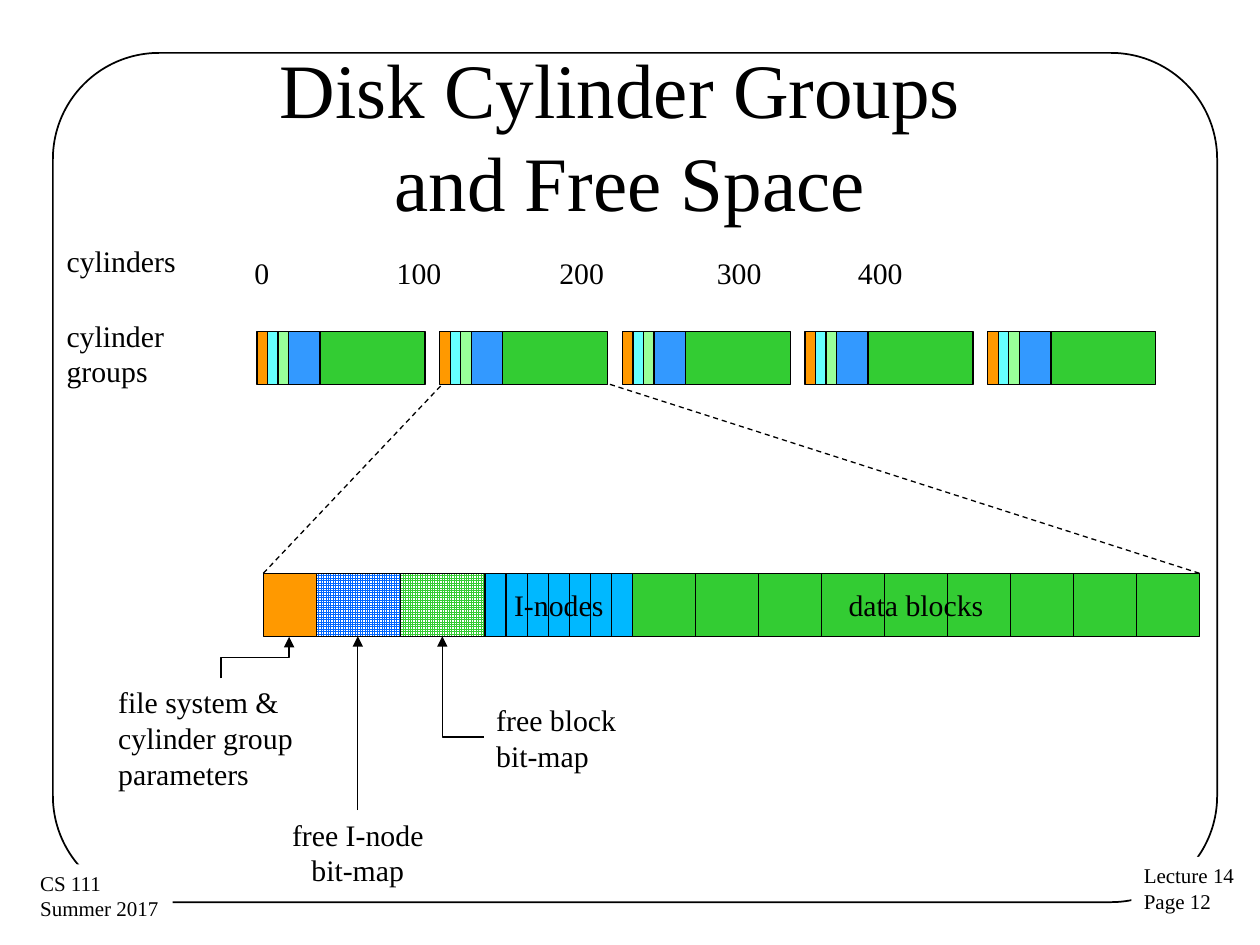
from lxml import etree
from pptx import Presentation
from pptx.dml.color import RGBColor
from pptx.enum import dml, shapes, text
from pptx.oxml.ns import qn
from pptx.util import Inches, Pt

FONT, INK, WHITE = "Times New Roman", "000000", "FFFFFF"
LEFT, MID = text.PP_ALIGN.LEFT, text.PP_ALIGN.CENTER
STRAIGHT, ELBOW = shapes.MSO_CONNECTOR.STRAIGHT, shapes.MSO_CONNECTOR.ELBOW

TITLE = ["Disk Cylinder Groups ", "and Free Space"]
FOOTERS = [
    ((8.98, 6.8, 0.93, 0.51), ["Lecture 14", "Page 12"]),
    ((0.22, 6.86, 1.15, 0.51), ["CS 111", "Summer 2017"]),
]
LABELS = [
    ((0.43, 1.88, 1.25, 0.38), "cylinders", LEFT),
    ((0.43, 2.47, 1.5, 0.67), "cylinder groups", LEFT),
    ((0.84, 5.38, 1.83, 0.96), "file system & cylinder group parameters", LEFT),
    ((3.84, 5.52, 1.5, 0.67), "free block bit-map", LEFT),
    ((2.09, 6.43, 1.5, 0.67), "free I-node bit-map", MID),
]
COUNTS = ["0", "100", "200", "300", "400"]
STOPS = [1.13, 2.42, 3.67, 4.79]

# One small group: width in twelfths of an inch, colour
PARTS = [(1, "FF9900"), (1, "66FFFF"), (1, "99FF99"), (3, "3399FF"), (10, "33CC33")]
GROUPS, START, PITCH = 5, 2.04, 1.45
ROW, TALL = 2.63, 0.42

# The enlarged group: width, colour, is patterned, label, number of cells
ZOOM = [
    (0.42, "FF9900", False, "", 1),
    (0.67, "0066FF", True, "", 1),
    (0.67, "33CC33", True, "", 1),
    (1.17, "00B8FF", False, "I-nodes", 7),
    (4.5, "33CC33", False, "data blocks", 9),
]
EDGE, TOP, HIGH = 2.09, 4.55, 0.5
BASE = TOP + HIGH

deck = Presentation()
deck.slide_width, deck.slide_height = Inches(10), Inches(7.5)
slide = deck.slides.add_slide(deck.slide_layouts[6])


def color(code):
    return RGBColor.from_string(code)


def write(frame, lines, size=17, align=LEFT, wrap=True):
    frame.word_wrap = wrap
    for i, words in enumerate(lines):
        para = frame.paragraphs[0] if i == 0 else frame.add_paragraph()
        para.alignment = align
        add_run(para, words, size)


def add_run(para, words, size):
    run = para.add_run()
    run.text = words
    run.font.name, run.font.size = FONT, Pt(size)
    run.font.color.rgb = color(INK)


def label(box, lines, **style):
    item = slide.shapes.add_textbox(*map(Inches, box))
    write(item.text_frame, lines, **style)
    return item


def block(box, fill=None, grid=False, kind=shapes.MSO_SHAPE.RECTANGLE, width=0.75):
    item = slide.shapes.add_shape(kind, *map(Inches, box))
    item.shadow.inherit = False
    if grid:
        item.fill.patterned()
        item.fill.pattern = dml.MSO_PATTERN.SMALL_GRID
        item.fill.fore_color.rgb = color(fill)
        item.fill.back_color.rgb = color(WHITE)
    elif fill:
        item.fill.solid()
        item.fill.fore_color.rgb = color(fill)
    else:
        item.fill.background()
    item.line.color.rgb, item.line.width = color(INK), Pt(width)
    return item


def join(start, end, kind=STRAIGHT, arrow=False, dash=False, turn=0, form=None):
    """Draw a line; turn is in degrees, form names another preset bend."""
    wire = slide.shapes.add_connector(kind, *map(Inches, start + end))
    wire.line.color.rgb, wire.line.width = color(INK), Pt(0.75)
    if dash:
        wire.line.dash_style = dml.MSO_LINE.DASH
    props = wire._element.spPr
    if arrow:
        etree.SubElement(props.find(qn("a:ln")), qn("a:tailEnd"), type="triangle")
    if turn:
        props.find(qn("a:xfrm")).set("rot", str(turn * 60000))
    if form:
        props.find(qn("a:prstGeom")).set("prst", form)
    etree.SubElement(props, qn("a:effectLst"))


# Frame, footers and title
frame = block((0.42, 0.42, 9.24, 6.74), kind=shapes.MSO_SHAPE.ROUNDED_RECTANGLE, width=1)
frame.adjustments[0] = 0.125
for box, lines in FOOTERS:
    foot = label(box, lines, size=12, wrap=False)
    foot.fill.solid()
    foot.fill.fore_color.rgb = color(WHITE)

title = label((0.5, 0.44, 9, 1.25), TITLE[:1], size=44, align=MID).text_frame
title.vertical_anchor = text.MSO_ANCHOR.MIDDLE
title.paragraphs[0].add_line_break()
add_run(title.paragraphs[0], TITLE[1], 44)

# Enlarged group, with its cell dividers on top
x = EDGE
ticks = []
for wide, fill, grid, words, cells in ZOOM:
    part = block((x, TOP, wide, HIGH), fill, grid)
    if words:
        part.text_frame.vertical_anchor = text.MSO_ANCHOR.MIDDLE
        write(part.text_frame, [words], align=MID, wrap=False)
    ticks += [x + wide * n / cells for n in range(1, cells)]
    x += wide
for tick in ticks:
    join((tick, TOP), (tick, BASE))

# Row of small groups
for n in range(GROUPS):
    left = START + n * PITCH
    for units, fill in PARTS:
        block((left, ROW, units / 12, TALL), fill)
        left += units / 12

# Labels and cylinder numbers
for box, words, align in LABELS:
    label(box, [words], align=align)
scale = label((1.92, 1.97, 7.25, 0.38), ["\t".join(COUNTS)])
tabs = etree.SubElement(scale.text_frame.paragraphs[0]._p.get_or_add_pPr(), qn("a:tabLst"))
for stop in STOPS:
    etree.SubElement(tabs, qn("a:tab"), pos=str(Inches(stop)), algn="l")

# Zoom lines and pointers
join((EDGE, TOP), (3.51, ROW + TALL), dash=True)
join((x, TOP), (4.84, ROW + TALL), dash=True)
join((2.84, 6.43), (2.84, BASE), arrow=True)
join((2.19, 5.49), (1.86, 4.95), ELBOW, arrow=True, turn=90)
join((3.51, BASE), (3.84, 5.85), ELBOW, arrow=True, turn=180, form="bentConnector2")

deck.save("out.pptx")
